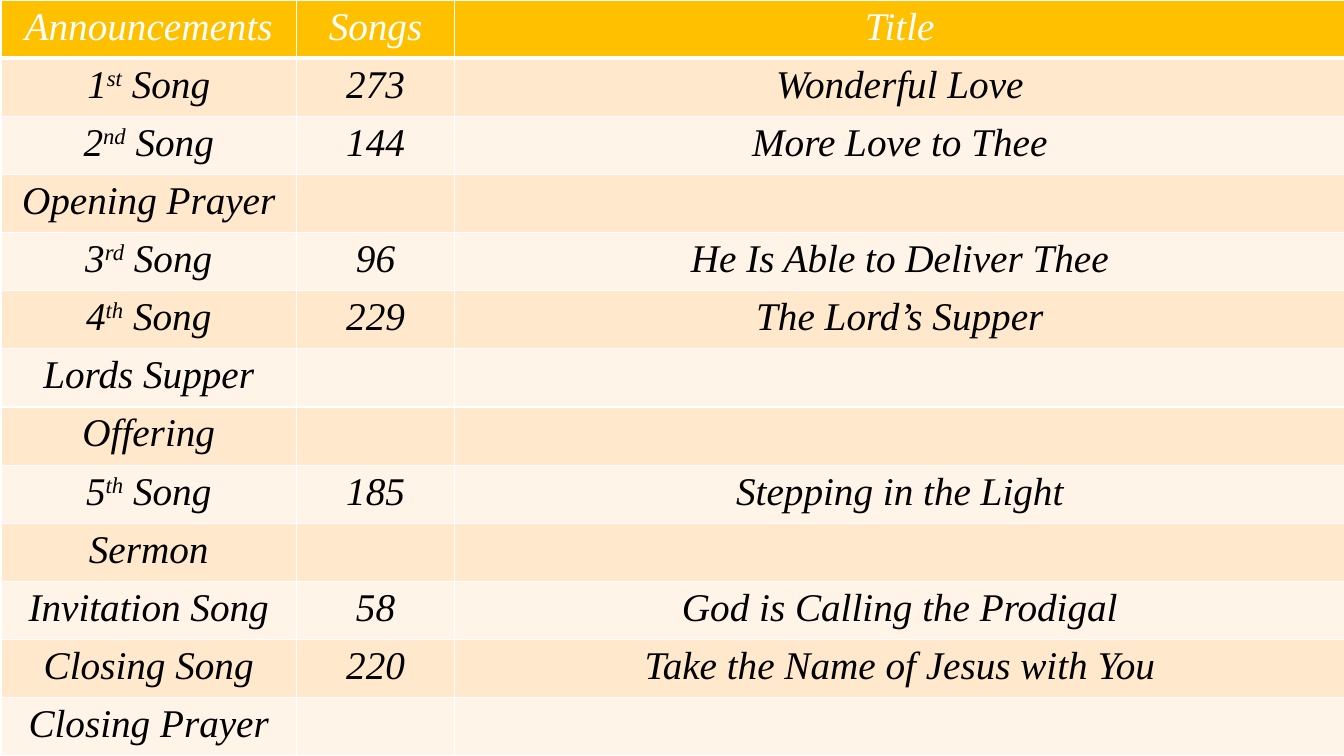
from dataclasses import dataclass

from lxml import etree
from pptx import Presentation
from pptx.dml.color import RGBColor
from pptx.enum.text import PP_ALIGN
from pptx.oxml.ns import qn
from pptx.util import Inches, Pt

CENTER = PP_ALIGN.CENTER
BLANK_LAYOUT = 6
SLIDE_WIDTH, SLIDE_HEIGHT = 13.33, 7.5


@dataclass(frozen=True)
class Theme:
    font: str = "Times New Roman"
    size: int = 28
    header_text: str = "FFFFFF"
    body_text: str = "000000"
    header_fill: str = "FFC000"
    band_fills: tuple = ("FFE8CC", "FFF4E7")
    border: str = "FFFFFF"
    border_width: int = 1
    header_rule: int = 3


THEME = Theme()

COLUMN_WIDTHS = (2.93, 1.57, 8.83)
HEADINGS = ("Announcements", "Songs", "Title")
SERVICE = (
    ("1^st^ Song", "273", "Wonderful Love"),
    ("2^nd^ Song", "144", "More Love to Thee"),
    ("Opening Prayer", "", ""),
    ("3^rd^ Song", "96", "He Is Able to Deliver Thee"),
    ("4^th^ Song", "229", "The Lord’s Supper"),
    ("Lords Supper", "", ""),
    ("Offering", "", ""),
    ("5^th^ Song", "185", "Stepping in the Light"),
    ("Sermon", "", ""),
    ("Invitation Song", "58", "God is Calling the Prodigal"),
    ("Closing Song", "220", "Take the Name of Jesus with You"),
    ("Closing Prayer", "", ""),
)


def write_text(frame, text, *, color, size=THEME.size, font=THEME.font, align=CENTER):
    para = frame.paragraphs[0]
    para.alignment = align
    for index, part in enumerate(text.split("^")):
        if not part:
            continue
        span = para.add_run()
        span.text = part
        span.font.name = font
        span.font.size = Pt(size)
        span.font.italic = True
        span.font.bold = False
        span.font.color.rgb = RGBColor.from_string(color)
        if index % 2:
            span._r.get_or_add_rPr().set("baseline", "30000")


def set_borders(cell, bottom_width):
    properties = cell._tc.get_or_add_tcPr()
    for side in ("L", "R", "T", "B"):
        width = bottom_width if side == "B" else THEME.border_width
        line = etree.SubElement(properties, qn(f"a:ln{side}"), w=str(Pt(width)))
        fill = etree.SubElement(line, qn("a:solidFill"))
        etree.SubElement(fill, qn("a:srgbClr"), val=THEME.border)


def style_cell(cell, text, *, fill, color, bottom_width):
    set_borders(cell, bottom_width)
    cell.fill.solid()
    cell.fill.fore_color.rgb = RGBColor.from_string(fill)
    write_text(cell.text_frame, text, color=color)


def add_service_table(page, left, top, width, height):
    entries = (HEADINGS, *SERVICE)
    box = page.shapes.add_table(
        len(entries), len(HEADINGS),
        Inches(left), Inches(top), Inches(width), Inches(height),
    )
    table = box.table
    for column, share in zip(table.columns, COLUMN_WIDTHS):
        column.width = Inches(width * share / sum(COLUMN_WIDTHS))
    for index, (row, entry) in enumerate(zip(table.rows, entries)):
        row.height = Inches(height / len(entries))
        is_header = index == 0
        fill = THEME.header_fill if is_header else THEME.band_fills[(index - 1) % 2]
        color = THEME.header_text if is_header else THEME.body_text
        bottom_width = THEME.header_rule if is_header else THEME.border_width
        for cell, text in zip(row.cells, entry):
            style_cell(cell, text, fill=fill, color=color, bottom_width=bottom_width)


def main():
    deck = Presentation()
    deck.slide_width = Inches(SLIDE_WIDTH)
    deck.slide_height = Inches(SLIDE_HEIGHT)
    page = deck.slides.add_slide(deck.slide_layouts[BLANK_LAYOUT])
    add_service_table(page, 0.01, 0, SLIDE_WIDTH, SLIDE_HEIGHT)
    deck.save("out.pptx")


if __name__ == "__main__":
    main()
